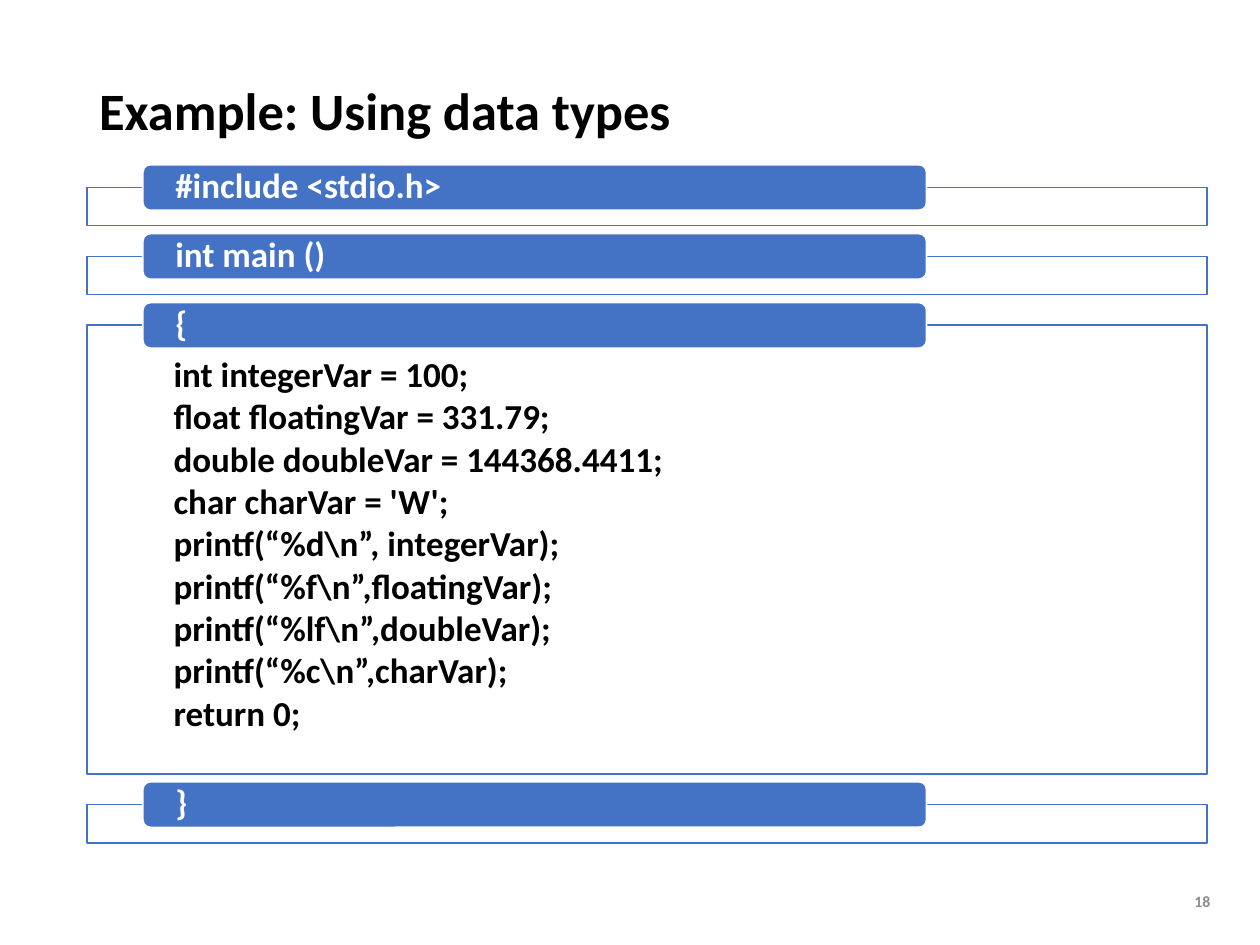
from pptx import Presentation
from pptx.dml.color import RGBColor
from pptx.enum.shapes import MSO_SHAPE as Shape
from pptx.enum.text import MSO_ANCHOR as Anchor, PP_ALIGN as Align
from pptx.oxml.ns import qn
from pptx.util import Cm, Pt
from lxml.etree import SubElement

BLUE, WHITE, BLACK, GREY = "4472C4", "FFFFFF", "000000", "8C8C8C"
FRAME_LEFT, FRAME_WIDTH, FIRST_TOP, FRAME_GAP = 1.75, 22.58, 3.78, 0.62
EMPTY_HEIGHT, BODY_HEIGHT = 0.77, 9.04
HEADER_LEFT, HEADER_WIDTH, HEADER_HEIGHT, HEADER_RISE = 2.88, 15.8, 0.92, 0.46

BODY_LINES = [
    "int integerVar = 100;",
    "float floatingVar = 331.79;",
    "double doubleVar = 144368.4411;",
    "char charVar = 'W';",
    "printf(“%d\\n”, integerVar);",
    "printf(“%f\\n”,floatingVar);",
    "printf(“%lf\\n”,doubleVar);",
    "printf(“%c\\n”,charVar);",
    "return 0;",
]
SECTIONS = [
    ("#include <stdio.h>", []),
    ("int main ()", []),
    ("{", BODY_LINES),
    ("}", []),
]


def color(value):
    return RGBColor.from_string(value)


def set_attributes(target, values):
    for name, value in values.items():
        setattr(target, name, value)


def write_text(shape, lines, size, text_color, frame_format, paragraph_format):
    frame = shape.text_frame
    set_attributes(frame, {"word_wrap": True, **frame_format})
    frame.text = "\n".join(lines)
    for paragraph in frame.paragraphs:
        set_attributes(paragraph, paragraph_format)
        set_attributes(paragraph.font, {"name": "Calibri", "size": Pt(size), "bold": True})
        paragraph.font.color.rgb = color(text_color)


def add_label(slide, box, text, size, text_color, **paragraph_format):
    shape = slide.shapes.add_textbox(*map(Cm, box))
    write_text(shape, [text], size, text_color,
               {"vertical_anchor": Anchor.MIDDLE}, paragraph_format)


def add_box(slide, kind, box, fill, line):
    shape = slide.shapes.add_shape(kind, *map(Cm, box))
    shape.shadow.inherit = False
    shape.fill.solid()
    shape.fill.fore_color.rgb = color(fill)
    shape.line.color.rgb = color(line)
    shape.line.width = Pt(1)
    return shape


def add_frame(slide, top, height, lines):
    box = (FRAME_LEFT, top, FRAME_WIDTH, height)
    shape = add_box(slide, Shape.RECTANGLE, box, WHITE, BLUE)
    fill = shape.fill._xPr.find(qn("a:solidFill"))
    SubElement(fill[0], qn("a:alpha"), val="90000")
    if lines:
        margins = {"margin_left": Cm(1.75), "margin_right": Cm(1.75),
                   "margin_top": Cm(0.64), "margin_bottom": Cm(0.4),
                   "vertical_anchor": Anchor.TOP}
        write_text(shape, lines, 20, BLACK, margins,
                   {"alignment": Align.LEFT, "line_spacing": 0.9, "space_after": Pt(2.6)})


def add_header(slide, frame_top, text):
    box = (HEADER_LEFT, frame_top - HEADER_RISE, HEADER_WIDTH, HEADER_HEIGHT)
    shape = add_box(slide, Shape.ROUNDED_RECTANGLE, box, BLUE, WHITE)
    margins = {"margin_left": Cm(0.61), "margin_right": Cm(0.61),
               "margin_top": 0, "margin_bottom": 0, "vertical_anchor": Anchor.MIDDLE}
    write_text(shape, [text], 20, WHITE, margins,
               {"alignment": Align.LEFT, "line_spacing": 0.9})


def main():
    presentation = Presentation()
    set_attributes(presentation, {"slide_width": Cm(25.4), "slide_height": Cm(19.05)})
    slide = presentation.slides.add_slide(presentation.slide_layouts[6])
    add_label(slide, (1.75, 1.42, 22.91, 1.75), "Example: Using data types",
              30, BLACK, line_spacing=0.9)
    add_label(slide, (23.65, 17.65, 1, 1.02), "18", 9, GREY, alignment=Align.RIGHT)
    top = FIRST_TOP
    for header, lines in SECTIONS:
        height = BODY_HEIGHT if lines else EMPTY_HEIGHT
        add_frame(slide, top, height, lines)
        add_header(slide, top, header)
        top += height + FRAME_GAP
    presentation.save("out.pptx")


if __name__ == "__main__":
    main()
